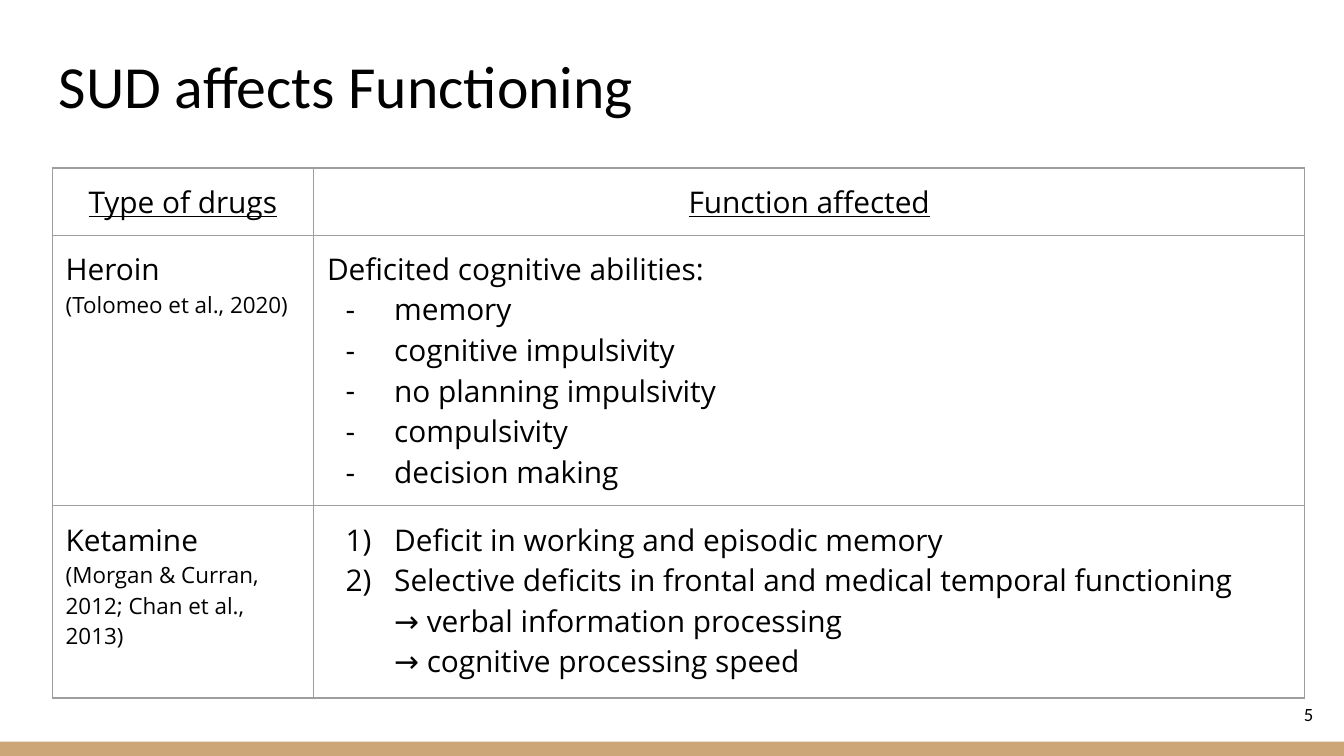
import pptx
import pptx.dml.color
import pptx.enum.shapes
import pptx.enum.text
import pptx.oxml.ns
import pptx.util
from lxml import etree

Pt = pptx.util.Pt
ALIGN = pptx.enum.text.PP_ALIGN
ANCHOR = pptx.enum.text.MSO_ANCHOR

BLACK = "000000"
TAN = "CCA677"
BORDER_GRAY = "9E9E9E"
HEADING_FONT = "Calibri"
BODY_FONT = "Open Sans"
INSET = 7.2
LIST_INDENT = 36
LIST_HANGING = 26

COLUMN_WIDTHS = (140, 531)
ROW_HEIGHTS = (36, 145, 103)

HEADER = {"align": ALIGN.CENTER, "underline": True}
CITATION = {"size": 12}
DASH = {"indent": LIST_INDENT, "bullet": ("buChar", {"char": "-"})}
NUMBER = {"indent": LIST_INDENT, "bullet": ("buAutoNum", {"type": "arabicParenR"})}
CONTINUED = {"indent": LIST_INDENT}

# Each cell is a list of (text, format) paragraphs.
DRUG_ROWS = [
    [[("Type of drugs", HEADER)], [("Function affected", HEADER)]],
    [
        [("Heroin", {}), ("(Tolomeo et al., 2020)", CITATION)],
        [
            ("Deficited cognitive abilities:", {}),
            ("memory", DASH),
            ("cognitive impulsivity", DASH),
            ("no planning impulsivity", DASH),
            ("compulsivity", DASH),
            ("decision making", DASH),
        ],
    ],
    [
        [("Ketamine", {}), ("(Morgan & Curran, 2012; Chan et al., 2013)", CITATION)],
        [
            ("Deficit in working and episodic memory", NUMBER),
            ("Selective deficits in frontal and medical temporal functioning", NUMBER),
            ("→ verbal information processing", CONTINUED),
            ("→ cognitive processing speed", CONTINUED),
        ],
    ],
]


def color(hex_string):
    return pptx.dml.color.RGBColor.from_string(hex_string)


def add_element(parent, tag, **attributes):
    element = etree.SubElement(parent, pptx.oxml.ns.qn(f"a:{tag}"))
    for name, value in attributes.items():
        element.set(name, str(value))
    return element


def set_list_format(paragraph, indent, bullet):
    properties = paragraph._p.get_or_add_pPr()
    properties.set("marL", str(Pt(indent)))
    properties.set("indent", str(-Pt(LIST_HANGING) if bullet else 0))
    if bullet:
        tag, attributes = bullet
        add_element(add_element(properties, "buClr"), "srgbClr", val=BLACK)
        add_element(properties, "buFont", typeface=BODY_FONT)
        add_element(properties, tag, **attributes)
    else:
        add_element(properties, "buNone")


def write_text(paragraph, text, size=16, font=BODY_FONT, align=ALIGN.LEFT,
               underline=False, indent=0, bullet=None):
    paragraph.alignment = align
    set_list_format(paragraph, indent, bullet)
    run = paragraph.add_run()
    run.text = text
    run.font.size = Pt(size)
    run.font.name = font
    run.font.underline = underline
    run.font.color.rgb = color(BLACK)


def set_insets(holder):
    for side in ("left", "top", "right", "bottom"):
        setattr(holder, f"margin_{side}", Pt(INSET))


def add_label(slide, left, top, width, height, text, anchor, **text_format):
    box = slide.shapes.add_textbox(Pt(left), Pt(top), Pt(width), Pt(height))
    frame = box.text_frame
    frame.word_wrap = True
    frame.vertical_anchor = anchor
    set_insets(frame)
    write_text(frame.paragraphs[0], text, font=HEADING_FONT, **text_format)


def add_footer_band(slide, left, top, width, height):
    band = slide.shapes.add_shape(
        pptx.enum.shapes.MSO_SHAPE.RECTANGLE, Pt(left), Pt(top), Pt(width), Pt(height))
    band.shadow.inherit = False
    band.fill.solid()
    band.fill.fore_color.rgb = color(TAN)
    band.line.fill.background()


def add_cell_borders(cell):
    properties = cell._tc.get_or_add_tcPr()
    for side in ("lnL", "lnR", "lnT", "lnB"):
        line = add_element(properties, side, w=Pt(0.75))
        add_element(add_element(line, "solidFill"), "srgbClr", val=BORDER_GRAY)


def fill_cell(cell, paragraphs):
    set_insets(cell)
    cell.vertical_anchor = ANCHOR.TOP
    add_cell_borders(cell)
    cell.fill.background()
    frame = cell.text_frame
    for index, (text, text_format) in enumerate(paragraphs):
        paragraph = frame.add_paragraph() if index else frame.paragraphs[0]
        write_text(paragraph, text, **text_format)


def add_drug_table(slide, left, top):
    table = slide.shapes.add_table(
        len(ROW_HEIGHTS), len(COLUMN_WIDTHS), Pt(left), Pt(top),
        Pt(sum(COLUMN_WIDTHS)), Pt(sum(ROW_HEIGHTS))).table
    table.first_row = False
    table.horz_banding = False
    for column, width in zip(table.columns, COLUMN_WIDTHS):
        column.width = Pt(width)
    for row, height, contents in zip(table.rows, ROW_HEIGHTS, DRUG_ROWS):
        row.height = Pt(height)
        for cell, paragraphs in zip(row.cells, contents):
            fill_cell(cell, paragraphs)


def main():
    presentation = pptx.Presentation()
    presentation.slide_width = Pt(720)
    presentation.slide_height = Pt(405)
    slide = presentation.slides.add_slide(presentation.slide_layouts[6])
    slide.background.fill.solid()
    slide.background.fill.fore_color.rgb = color("FFFFFF")

    add_footer_band(slide, 0, 397.4, 720, 7.6)
    add_label(slide, 24.5, 6.5, 671, 65.5, "SUD affects Functioning",
              ANCHOR.BOTTOM, size=32)
    add_drug_table(slide, 28, 90)
    add_label(slide, 667.4, 367.2, 43.2, 31, "5", ANCHOR.MIDDLE,
              size=10, align=ALIGN.RIGHT)
    presentation.save("out.pptx")


if __name__ == "__main__":
    main()
